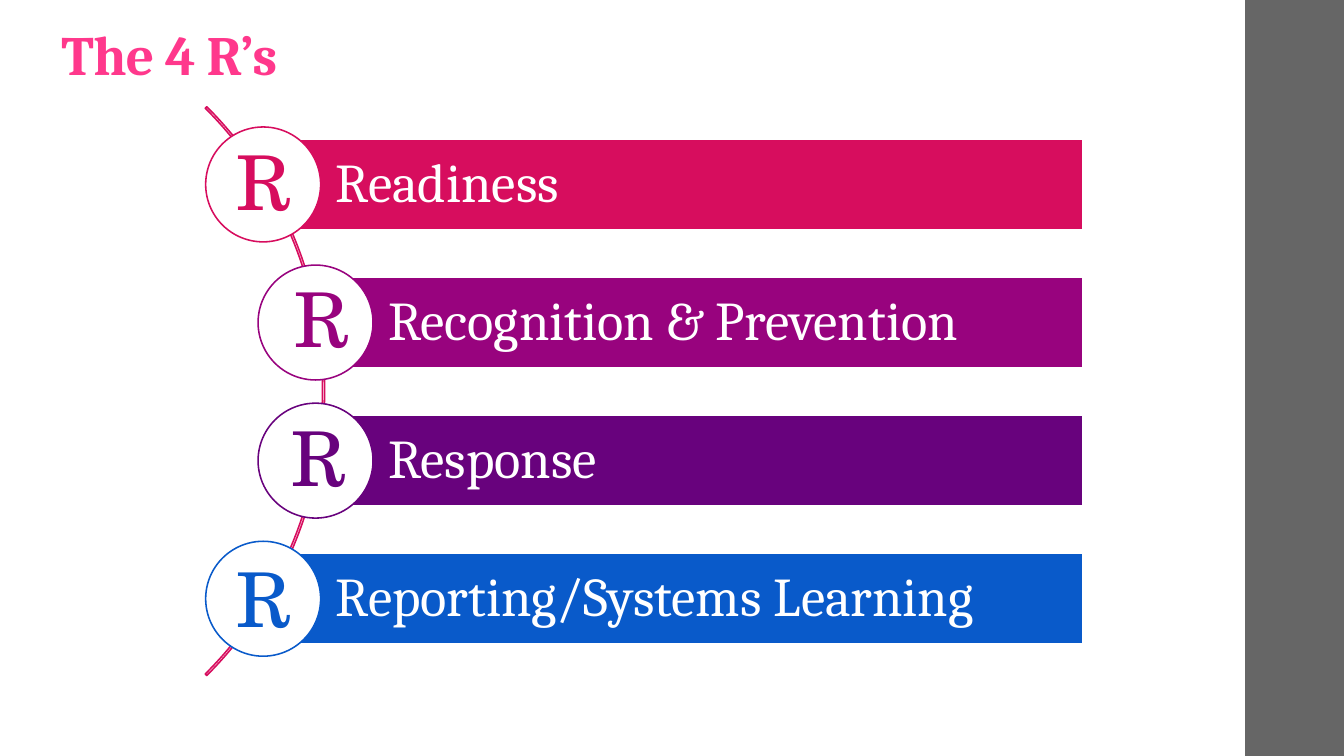
from pptx import Presentation
from pptx.dml.color import RGBColor
from pptx.enum.shapes import MSO_SHAPE
from pptx.enum.text import MSO_ANCHOR, MSO_AUTO_SIZE, PP_ALIGN
from pptx.util import Inches, Pt

RECT, OVAL, ARC = MSO_SHAPE.RECTANGLE, MSO_SHAPE.OVAL, MSO_SHAPE.BLOCK_ARC
LEFT, CENTER = PP_ALIGN.LEFT, PP_ALIGN.CENTER
MIDDLE, BOTTOM = MSO_ANCHOR.MIDDLE, MSO_ANCHOR.BOTTOM
NO_FIT, GROW = MSO_AUTO_SIZE.NONE, MSO_AUTO_SIZE.SHAPE_TO_FIT_TEXT

BAR_RIGHT, BAR_TOP, BAR_HEIGHT, STEP = 10.74, 1.38, 0.9, 1.37
CIRCLE = 1.14


def add_shape(kind, x, y, w, h, fill=None, line=None):
    sp = s.shapes.add_shape(kind, Inches(x), Inches(y), Inches(w), Inches(h))
    sp.shadow.inherit = False
    if fill:
        sp.fill.solid()
        sp.fill.fore_color.rgb = RGBColor.from_string(fill)
    else:
        sp.fill.background()
    if line:
        sp.line.color.rgb = RGBColor.from_string(line)
        sp.line.width = Pt(1.1)
    else:
        sp.line.fill.background()
    return sp


def write(tf, text, font, size, color, align):
    p = tf.paragraphs[0]
    p.text = text
    p.alignment = align
    p.font.name = font
    p.font.size = Pt(size)
    p.font.color.rgb = RGBColor.from_string(color)
    return p


prs = Presentation()
prs.slide_width, prs.slide_height = Inches(13.33), Inches(7.5)
s = prs.slides.add_slide(prs.slide_layouts[5])

# Side band
add_shape(RECT, 12.35, 0, 0.98, 7.5, "666666")

# Title
title = s.shapes.title
title.left, title.top = Inches(0.51), Inches(0.19)
title.width, title.height = Inches(10.6), Inches(0.73)
tf = title.text_frame
tf.auto_size = NO_FIT
tf.vertical_anchor = BOTTOM
tf.margin_top, tf.margin_bottom = Inches(0.03), Inches(0.05)
p = write(tf, "The 4 R’s", "Cambria", 39.6, "FF388C", LEFT)
p.font.bold = True
p.line_spacing = 0.9
p.runs[0]._r.get_or_add_rPr().set("spc", "-50")

# Arc behind the circles, from 315 to 45 degrees
arc = add_shape(ARC, -4.76, -0.11, 7.98, 7.98, line="D70D5E")
for i, value in enumerate((189, 27, 0.0027)):
    arc.adjustments[i] = value

# Bars with a lettered circle: label, colour, bar left, letter left and top
rows = [
    ("Readiness", "D70D5E", 2.61, 2.22, 1.29),
    ("Recognition & Prevention", "98037E", 3.13, 2.8, 2.65),
    ("Response", "68027D", 3.13, 2.77, 4.03),
    ("Reporting/Systems Learning", "095ACA", 2.61, 2.22, 5.43),
]
for i, (label, color, x, letter_x, letter_y) in enumerate(rows):
    y = BAR_TOP + i * STEP
    bar = add_shape(RECT, x, y, BAR_RIGHT - x, BAR_HEIGHT, color, "FFFFFF")
    tf = bar.text_frame
    tf.word_wrap = True
    tf.vertical_anchor = MIDDLE
    tf.margin_left = Inches(0.72)
    tf.margin_top = tf.margin_right = tf.margin_bottom = Inches(0.11)
    p = write(tf, label, "Cambria", 39, "FFFFFF", LEFT)
    p.line_spacing = 0.9

    add_shape(OVAL, x - CIRCLE / 2, y + (BAR_HEIGHT - CIRCLE) / 2,
              CIRCLE, CIRCLE, "FFFFFF", color)

    letter = s.shapes.add_textbox(Inches(letter_x), Inches(letter_y),
                                  Inches(0.79), Inches(1.01))
    tf = letter.text_frame
    tf.word_wrap = False
    tf.auto_size = GROW
    write(tf, "R", "TeX Gyre Schola", 54, color, CENTER)

prs.save("out.pptx")
